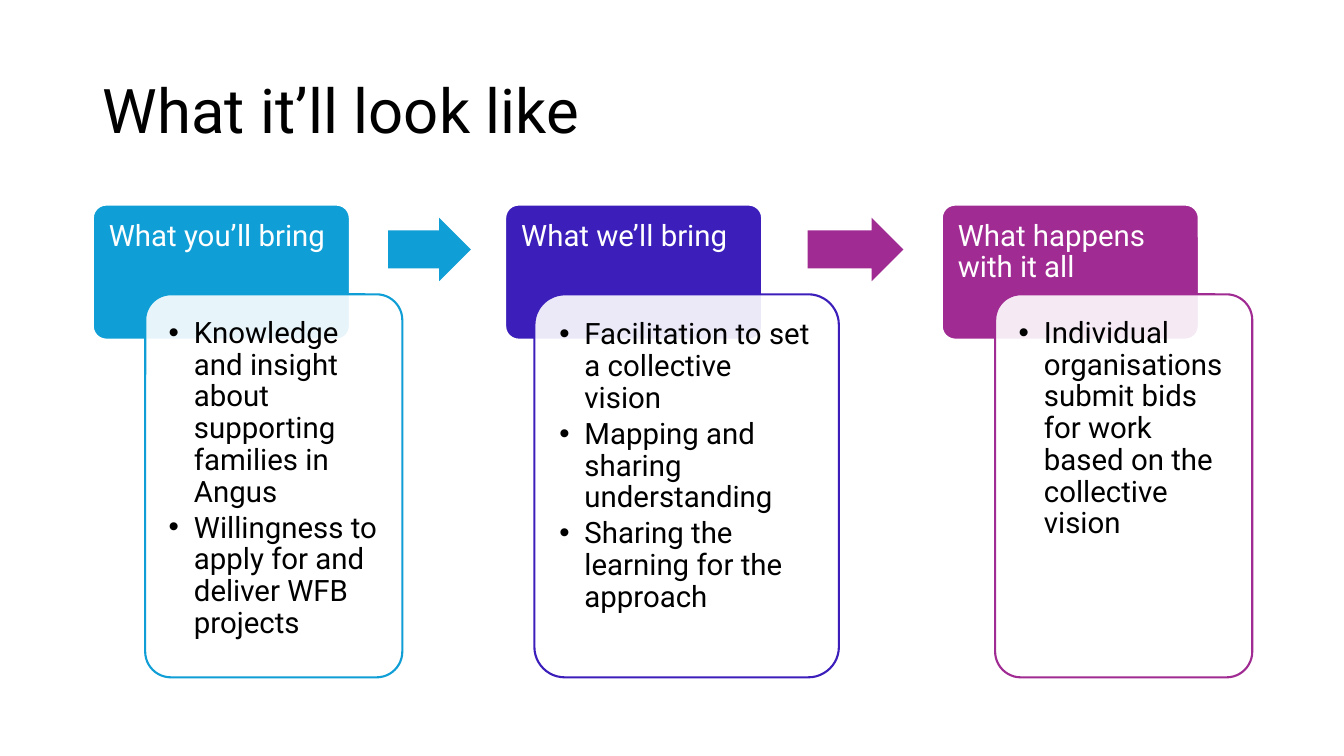
from dataclasses import dataclass

from lxml.etree import SubElement
from pptx import Presentation
from pptx.dml.color import RGBColor
from pptx.enum.shapes import MSO_SHAPE as Kind
from pptx.enum.text import MSO_ANCHOR as Anchor, PP_ALIGN as Align
from pptx.oxml.ns import qn
from pptx.util import Inches, Pt

FONT = "Roboto"
WHITE, BLACK = "FFFFFF", "000000"
ROUND = 0.1
PAD = 0.16
HEAD_W = 2.55
TOP = 2.03
CARD_TOP, CARD_H = 2.92, 3.8


@dataclass
class Stage:
    """A coloured heading with an overlapping card of bullets."""
    left: float
    color: str
    head: str
    card_x: float
    card_w: float
    items: list[str]


@dataclass
class Arrow:
    left: float
    width: float
    color: str


STAGES = [
    Stage(0.92, "0F9ED5", "What you’ll bring", 1.44, 2.55, [
        "Knowledge and insight about supporting families in Angus",
        "Willingness to apply for and deliver WFB projects"]),
    Stage(5.01, "3C1EBA", "What we’ll bring", 5.3, 3.02, [
        "Facilitation to set a collective vision",
        "Mapping and sharing understanding",
        "Sharing the learning for the approach"]),
    Stage(9.34, "A02B93", "What happens with it all", 9.87, 2.55, [
        "Individual organisations submit bids for work based on the "
        "collective vision"]),
]
ARROWS = [Arrow(3.85, 0.82, "0F9ED5"), Arrow(8.01, 0.95, "A02B93")]


def rgb(color: str) -> RGBColor:
    return RGBColor.from_string(color)


def box(x: float, y: float, w: float, h: float) -> list[int]:
    return [Inches(v) for v in (x, y, w, h)]


def style(para, size: float, color: str) -> None:
    para.alignment = Align.LEFT
    para.line_spacing = 0.9
    para.font.name = FONT
    para.font.size = Pt(size)
    para.font.color.rgb = rgb(color)


def add_shape(slide, kind, place: list[int], fill: str,
              line: str | None = None, alpha: int = 100):
    shape = slide.shapes.add_shape(kind, *place)
    shape.shadow.inherit = False
    shape.fill.solid()
    shape.fill.fore_color.rgb = rgb(fill)
    if alpha < 100:
        tint = shape.fill._xPr.find(".//" + qn("a:srgbClr"))
        SubElement(tint, qn("a:alpha"), val=str(alpha * 1000))
    if line:
        shape.line.color.rgb = rgb(line)
        shape.line.width = Pt(1.5)
    else:
        shape.line.fill.background()
    return shape


def add_text(slide, place: list[int], lines: list[str], color: str,
             foot: float = PAD, bullet: bool = False) -> None:
    frame = slide.shapes.add_textbox(*place).text_frame
    frame.word_wrap = True
    frame.margin_left = frame.margin_right = frame.margin_top = Inches(PAD)
    frame.margin_bottom = Inches(foot)
    for i, line in enumerate(lines):
        para = frame.add_paragraph() if i else frame.paragraphs[0]
        para.text = line
        style(para, 21, color)
        if bullet:
            para.space_after = Pt(3.15)
            props = para._p.get_or_add_pPr()
            props.set("marL", str(Inches(0.25)))
            props.set("indent", str(-Inches(0.25)))
            SubElement(props, qn("a:buFont"), typeface="Arial")
            SubElement(props, qn("a:buChar"), char="•")
            # The font defaults belong after the bullet
            fonts = props.find(qn("a:defRPr"))
            if fonts is not None:
                props.append(fonts)


def add_stage(slide, stage: Stage) -> None:
    # Heading
    head = add_shape(slide, Kind.ROUNDED_RECTANGLE,
                     box(stage.left, TOP, HEAD_W, 1.34), stage.color, WHITE)
    head.adjustments[0] = ROUND
    add_text(slide, box(stage.left, TOP, HEAD_W, 0.9), [stage.head],
             WHITE, foot=0.09)
    # Card, with its text set in by the corner radius
    card = add_shape(slide, Kind.ROUNDED_RECTANGLE,
                     box(stage.card_x, CARD_TOP, stage.card_w, CARD_H),
                     WHITE, stage.color, alpha=90)
    card.adjustments[0] = ROUND
    gap = stage.card_w * ROUND * 0.29
    add_text(slide, box(stage.card_x + gap, CARD_TOP + gap,
                        stage.card_w - 2 * gap, CARD_H - 2 * gap),
             stage.items, BLACK, bullet=True)


def add_arrow(slide, arrow: Arrow) -> None:
    shape = add_shape(slide, Kind.RIGHT_ARROW,
                      box(arrow.left, 2.16, arrow.width, 0.63), arrow.color)
    shape.adjustments[0] = 0.6
    shape.adjustments[1] = 0.5


def main() -> None:
    deck = Presentation()
    deck.slide_width, deck.slide_height = Inches(13.33), Inches(7.5)
    slide = deck.slides.add_slide(deck.slide_layouts[5])

    # Title
    title = slide.shapes.title
    title.left, title.top, title.width, title.height = box(
        0.92, 0.4, 11.5, 1.45)
    title.text_frame.text = "What it’ll look like"
    title.text_frame.vertical_anchor = Anchor.MIDDLE
    style(title.text_frame.paragraphs[0], 44, BLACK)

    # Stages and the arrows between them
    for stage in STAGES:
        add_stage(slide, stage)
    for arrow in ARROWS:
        add_arrow(slide, arrow)

    deck.save("out.pptx")


if __name__ == "__main__":
    main()
